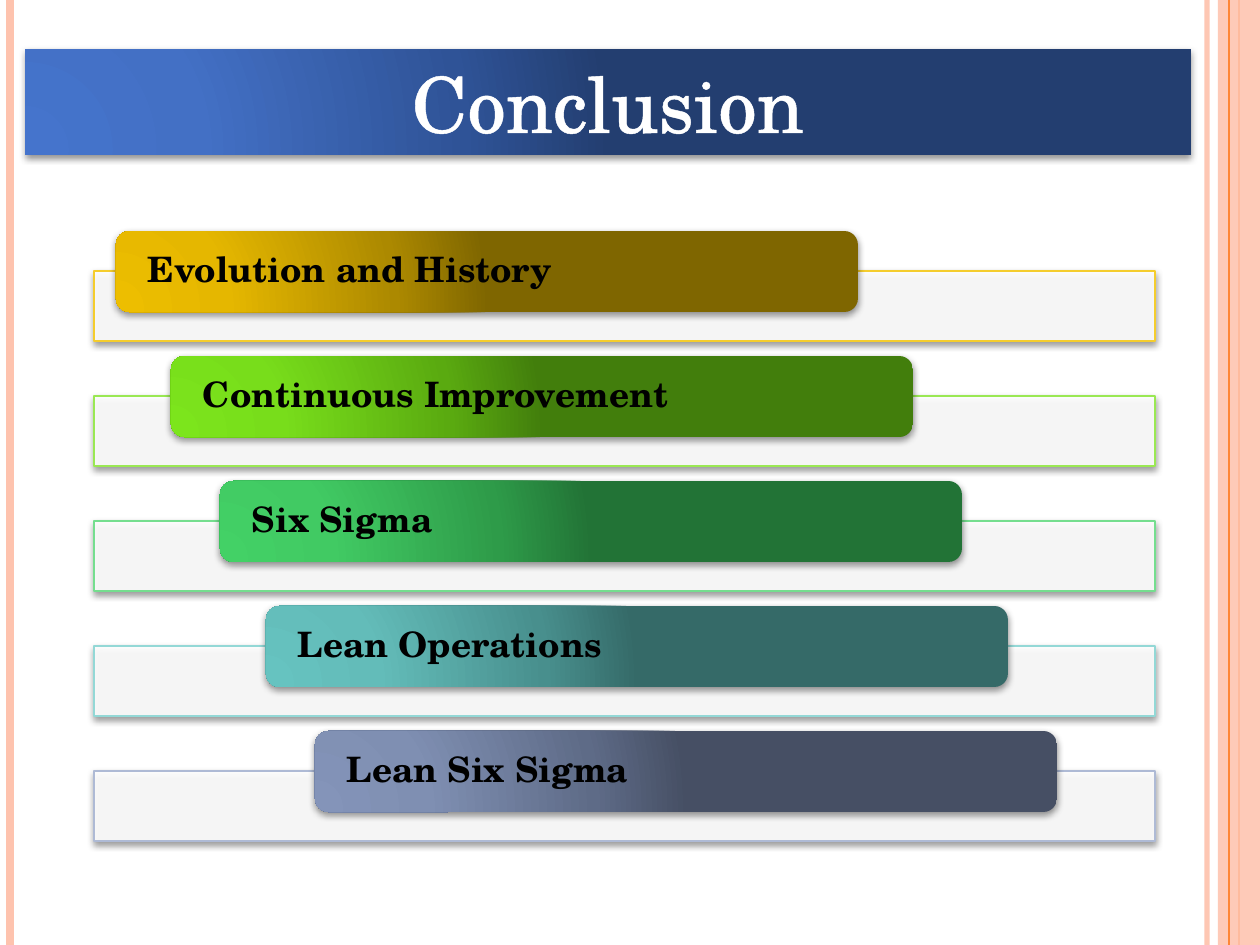
from lxml import etree
from pptx import Presentation
from pptx.dml.color import RGBColor
from pptx.enum.shapes import MSO_CONNECTOR, MSO_SHAPE
from pptx.enum.text import MSO_ANCHOR, PP_ALIGN
from pptx.oxml.ns import qn
from pptx.util import Pt

PX = 914400 / 126
W, H = 1260, 945
FONT = "TeX Gyre Schola"
RECT, ROUND = MSO_SHAPE.RECTANGLE, MSO_SHAPE.ROUNDED_RECTANGLE
STRAIGHT = MSO_CONNECTOR.STRAIGHT
LEFT, CENTER, MIDDLE = PP_ALIGN.LEFT, PP_ALIGN.CENTER, MSO_ANCHOR.MIDDLE

# x, colour, width in points, opacity in percent
RULES = [(1207, "FEC3AE", 3, 93), (10, "FEC3AE", 4.5, 100),
         (1239, "FE8637", 1.5, 100), (1229, "FE8637", 0.75, 100)]
STOPS = (0, 30, 75, 100)
TITLE_COLORS = ("4574CC", "4370C5", "2F5397", "233E70")
PITCH = 125
# topic, pill x, bar outline, pill gradient
TOPICS = [
    ("Evolution and History", 116, "F5CD2D", ("EDBE00", "E5B700", "AC8900", "7F6600")),
    ("Continuous Improvement", 171, "9AE853", ("7CE51C", "78DD1B", "5AAA10", "427E0C")),
    ("Six Sigma", 220, "75DE8F", ("43D166", "41CA63", "2E9B49", "227336")),
    ("Lean Operations", 266, "93D8D6", ("66C3C0", "63BCB9", "488F8D", "356A68")),
    ("Lean Six Sigma", 315, "AEBAD5", ("8494B9", "7F8FB2", "5E6B87", "464F64")),
]


def px(n):
    return round(n * PX)


def rgb(value):
    return RGBColor.from_string(value)


def sub(parent, tag, **attrs):
    return etree.SubElement(parent, qn(tag), {k: str(v) for k, v in attrs.items()})


def add_color(parent, color, opacity=100):
    clr = sub(parent, "a:srgbClr", val=color)
    if opacity < 100:
        sub(clr, "a:alpha", val=opacity * 1000)


def set_solid(fill_owner, color, opacity=100):
    """Solid fill of a shape or a line, with opacity."""
    fill_owner.fill.solid()
    fill_owner.fill.fore_color.rgb = rgb(color)
    if opacity < 100:
        parent = fill_owner._element.spPr if hasattr(fill_owner, "_element") \
            else fill_owner._ln
        clr = parent.find(qn("a:solidFill")).find(qn("a:srgbClr"))
        sub(clr, "a:alpha", val=opacity * 1000)


def set_gradient(sp, colors):
    sp.fill.gradient()
    grad = sp._element.spPr.find(qn("a:gradFill"))
    for child in list(grad):
        grad.remove(child)
    stops = sub(grad, "a:gsLst")
    for pos, color in zip(STOPS, colors):
        add_color(sub(stops, "a:gs", pos=pos * 1000), color)
    circle = sub(grad, "a:path", path="circle")
    sub(circle, "a:fillToRect", l=5000, t=100000, r=120000, b=10000)


def set_shadow(sp):
    sp.shadow.inherit = False
    effects = sp._element.spPr.find(qn("a:effectLst"))
    shadow = sub(effects, "a:outerShdw", blurRad=Pt(4), dist=Pt(1.6),
                 dir=90 * 60000, algn="ctr", rotWithShape=0)
    add_color(shadow, "000000", 42)


def set_text(sp, text, size, color, align, bold=False, inset=0, spacing=1.0):
    tf = sp.text_frame
    frame = {"word_wrap": True, "vertical_anchor": MIDDLE, "margin_left": px(inset),
             "margin_right": px(inset), "margin_top": 0, "margin_bottom": 0}
    for name, value in frame.items():
        setattr(tf, name, value)
    p = tf.paragraphs[0]
    p.alignment, p.line_spacing = align, spacing
    r = p.add_run()
    r.text = text
    for name, value in {"name": FONT, "size": Pt(size), "bold": bold}.items():
        setattr(r.font, name, value)
    r.font.color.rgb = rgb(color)
    return r


def add_box(slide, kind, x, y, w, h):
    sp = slide.shapes.add_shape(kind, px(x), px(y), px(w), px(h))
    sp.shadow.inherit = False
    sp.line.fill.background()
    return sp


def add_rule(slide, x, color, width, opacity):
    line = slide.shapes.add_connector(STRAIGHT, px(x), 0, px(x), px(H))
    line.line.width = Pt(width)
    line.line.fill.solid()
    line.line.fill.fore_color.rgb = rgb(color)
    if opacity < 100:
        clr = next(line._element.spPr.iter(qn("a:srgbClr")))
        sub(clr, "a:alpha", val=opacity * 1000)
    sub(line._element.spPr, "a:effectLst")


def add_title(slide, text):
    sp = slide.shapes.title
    box = {"left": 25, "top": 49, "width": 1166, "height": 106}
    for name, value in box.items():
        setattr(sp, name, px(value))
    set_gradient(sp, TITLE_COLORS)
    set_shadow(sp)
    r = set_text(sp, text, 44, "FFFFFF", CENTER)
    # Thin outline on the letters
    ln = etree.Element(qn("a:ln"), {"w": str(Pt(1.45))})
    add_color(sub(ln, "a:solidFill"), "FFFFFF")
    r.font._element.insert(0, ln)


def add_topic(slide, row, text, x, outline, colors):
    top = 231 + row * PITCH
    bar = add_box(slide, RECT, 94, top + 40, 1061, 70)
    set_solid(bar, "FFFFFF", 90)
    bar.line.color.rgb = rgb(outline)
    bar.line.width = Pt(1)
    set_shadow(bar)

    pill = add_box(slide, ROUND, x, top, 742, 81)
    set_gradient(pill, colors)
    set_shadow(pill)
    set_text(pill, text, 20, "000000", LEFT, bold=True, inset=28, spacing=0.9)


def main():
    prs = Presentation()
    prs.slide_width, prs.slide_height = px(W), px(H)
    slide = prs.slides.add_slide(prs.slide_layouts[5])

    # Side decoration
    for rule in RULES[:3]:
        add_rule(slide, *rule)
    band = add_box(slide, RECT, 1218, 0, 42, H)
    set_solid(band, "FEC3AE", 87)
    add_rule(slide, *RULES[3])

    # Title and staggered topics
    add_title(slide, "Conclusion")
    for row, topic in enumerate(TOPICS):
        add_topic(slide, row, *topic)

    prs.save("out.pptx")


if __name__ == "__main__":
    main()
